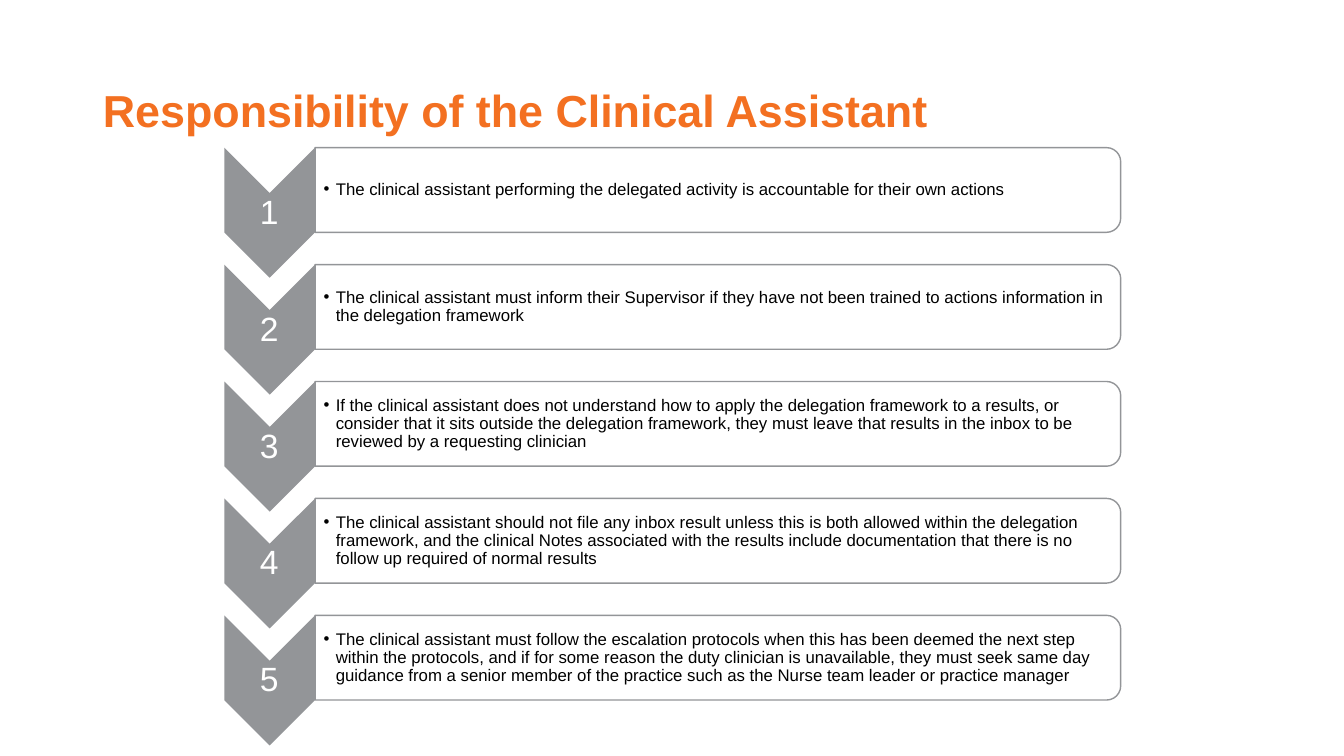
"""Build the slide on the responsibility of the clinical assistant."""
from dataclasses import dataclass

from lxml.etree import SubElement
from pptx import Presentation
from pptx.dml.color import RGBColor
from pptx.enum.shapes import MSO_SHAPE as Preset
from pptx.enum.text import MSO_ANCHOR as Anchor, PP_ALIGN as Align
from pptx.oxml.ns import qn
from pptx.shapes.autoshape import Shape
from pptx.shapes.group import GroupShape
from pptx.text.text import _Paragraph as Paragraph
from pptx.util import Inches, Pt

COLOURS = {"orange": "F37021", "grey": "939598", "white": "FFFFFF", "black": "000000"}
FONT = "Arial"
STEP_PITCH = 1.16


@dataclass(frozen=True)
class Step:
    """One numbered duty."""
    number: int
    duty: str


STEPS = [Step(number, duty) for number, duty in enumerate((
    "The clinical assistant performing the delegated activity is accountable for their own actions",
    "The clinical assistant must inform their Supervisor if they have not been trained to actions "
    "information in the delegation framework",
    "If the clinical assistant does not understand how to apply the delegation framework to a results, "
    "or consider that it sits outside the delegation framework, they must leave that results in the "
    "inbox to be reviewed by a requesting clinician",
    "The clinical assistant should not file any inbox result unless this is both allowed within the "
    "delegation framework, and the clinical Notes associated with the results include documentation "
    "that there is no follow up required of normal results",
    "The clinical assistant must follow the escalation protocols when this has been deemed the next "
    "step within the protocols, and if for some reason the duty clinician is unavailable, they must "
    "seek same day guidance from a senior member of the practice such as the Nurse team leader or "
    "practice manager",
), start=1)]


def colour(name: str) -> RGBColor:
    """Return a named colour."""
    return RGBColor.from_string(COLOURS[name])


def write(para: Paragraph, text: str, size: int, name: str, bold: bool = False) -> None:
    """Add one formatted run to a paragraph."""
    para.line_spacing = 0.9
    span = para.add_run()
    span.text = text
    span.font.name = FONT
    span.font.size = Pt(size)
    span.font.bold = bold
    span.font.color.rgb = colour(name)


def add_turned(group: GroupShape, preset: Preset, left: float, top: float,
               width: float, height: float, fill: str) -> Shape:
    """Add a filled shape turned a quarter to the right."""
    shape = group.shapes.add_shape(preset, Inches(left), Inches(top), Inches(width), Inches(height))
    shape.rotation = 90
    shape.shadow.inherit = False
    shape.fill.solid()
    shape.fill.fore_color.rgb = colour(fill)
    shape.line.fill.background()
    return shape


def add_text(group: GroupShape, left: float, top: float, width: float, height: float,
             first_inset: float, inset: float) -> Paragraph:
    """Add a middle-anchored text box and return its paragraph."""
    box = group.shapes.add_textbox(Inches(left), Inches(top), Inches(width), Inches(height))
    frame = box.text_frame
    frame.word_wrap = True
    frame.vertical_anchor = Anchor.MIDDLE
    frame.margin_left = Inches(first_inset)
    frame.margin_top = frame.margin_right = frame.margin_bottom = Inches(inset)
    return frame.paragraphs[0]


def add_bullet(para: Paragraph) -> None:
    """Give a paragraph a round bullet with a hanging indent."""
    para.level = 1
    properties = para._p.get_or_add_pPr()
    properties.set("marL", str(Inches(0.12)))
    properties.set("indent", str(Inches(-0.12)))
    SubElement(properties, qn("a:buFont")).set("typeface", FONT)
    SubElement(properties, qn("a:buChar")).set("char", "•")


def add_step(group: GroupShape, step: Step) -> None:
    """Draw the chevron, number, panel and duty of one step."""
    offset = (step.number - 1) * STEP_PITCH
    add_turned(group, Preset.CHEVRON, 2.03, 1.66 + offset, 1.29, 0.9, "grey")
    number = add_text(group, 2.22, 1.92 + offset, 0.9, 0.39, 0.02, 0.02)
    number.alignment = Align.CENTER
    write(number, str(step.number), 24, "white")

    panel = add_turned(group, Preset.ROUND_2_SAME_RECTANGLE, 6.7, offset - 2.11, 0.84, 7.99, "white")
    panel_colour = panel.fill._xPr.find(qn("a:solidFill"))[0]
    SubElement(panel_colour, qn("a:alpha")).set("val", "90000")
    panel.line.color.rgb = colour("grey")
    panel.line.width = Pt(1)
    duty = add_text(group, 3.12, 1.51 + offset, 7.95, 0.75, 0.09, 0.01)
    add_bullet(duty)
    write(duty, step.duty, 12, "black")


def main() -> None:
    """Build and save the deck."""
    deck = Presentation()
    deck.slide_width, deck.slide_height = Inches(13.33), Inches(7.5)
    page = deck.slides.add_slide(deck.slide_layouts[5])
    title = page.shapes.title
    title.left, title.top = Inches(0.92), Inches(0.4)
    title.width, title.height = Inches(11.5), Inches(1.45)
    title.text_frame.vertical_anchor = Anchor.MIDDLE
    heading = title.text_frame.paragraphs[0]
    heading.alignment = Align.LEFT
    write(heading, "Responsibility of the Clinical Assistant", 32, "orange", bold=True)

    group = page.shapes.add_group_shape()
    for step in STEPS:
        add_step(group, step)
    deck.save("out.pptx")


if __name__ == "__main__":
    main()
